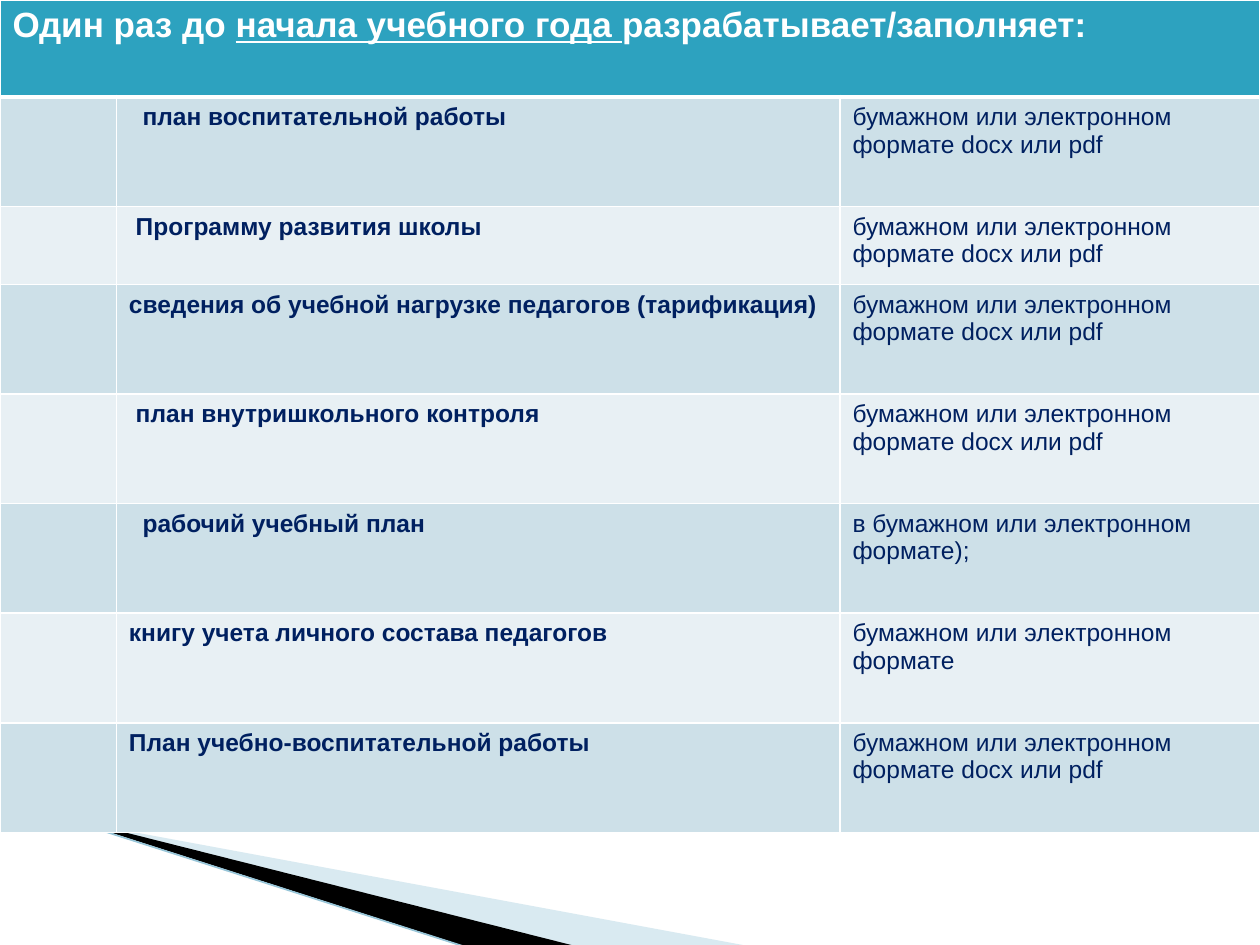
from dataclasses import dataclass

from lxml import etree
from pptx import Presentation
from pptx.dml.color import RGBColor
from pptx.enum.shapes import MSO_CONNECTOR
from pptx.enum.text import PP_ALIGN
from pptx.oxml.ns import qn
from pptx.util import Pt

STRAIGHT = MSO_CONNECTOR.STRAIGHT
JUSTIFY = PP_ALIGN.JUSTIFY
LEFT = PP_ALIGN.LEFT


@dataclass(frozen=True)
class Theme:
    font: str = "Arial"
    head_size: int = 20
    body_size: int = 14
    white: str = "FFFFFF"
    teal: str = "2DA2BF"
    bands: tuple = ("CDE0E8", "E8F0F4")
    navy: str = "002060"
    black: str = "000000"
    ray: str = "A0CBDC"
    edge: str = "97C5D8"


THEME = Theme()
HEAD = (("Один раз до ", False), ("начала учебного года ", True),
        ("разрабатывает/заполняет:", False))
FORMAT = "бумажном или электронном формате"
FILES = FORMAT + " docx или pdf"
# Document, its format, extra left inset, alignment
ROWS = (
    ("план воспитательной работы", FILES, 7.8, JUSTIFY),
    ("Программу развития школы", FILES, 3.9, LEFT),
    ("сведения об учебной нагрузке педагогов (тарификация)", FILES, 0, LEFT),
    ("план внутришкольного контроля", FILES, 3.9, LEFT),
    ("рабочий учебный план", "в бумажном или электронном формате);",
     7.8, JUSTIFY),
    ("книгу учета личного состава педагогов", FORMAT, 0, LEFT),
    ("План учебно-воспитательной работы", FILES, 0, LEFT),
)
COLS = (66.5, 413.5, 240)
HEAD_TALL, ROW_TALL, SLIM_TALL = 55.5, 62.6, 44.6
SLIM = 2


def rgb(code):
    return RGBColor.from_string(code)


def style(font, size, color, bold):
    font.name = THEME.font
    font.size = Pt(size)
    font.bold = bold
    font.color.rgb = rgb(color)


def paint(cell, color, top=1, base=1):
    """Set the borders of a cell, then its fill."""
    props = cell._tc.get_or_add_tcPr()
    for side, wide in zip("LRTB", (1, 1, top, base)):
        line = etree.SubElement(props, qn(f"a:ln{side}"), w=str(Pt(wide)))
        fill = etree.SubElement(line, qn("a:solidFill"))
        etree.SubElement(fill, qn("a:srgbClr"), val=THEME.white)
    cell.fill.solid()
    cell.fill.fore_color.rgb = rgb(color)


def write(cell, text, bold):
    para = cell.text_frame.paragraphs[0]
    para.text = text
    style(para.font, THEME.body_size, THEME.navy, bold)
    return para


def add_wedge(slide, box, points, color, alpha=None):
    left, top = box
    spots = [(Pt(left + x), Pt(top + y)) for x, y in points]
    form = slide.shapes.build_freeform(*spots[0], scale=1.0)
    form.add_line_segments(spots[1:], close=True)
    wedge = form.convert_to_shape()
    wedge.shadow.inherit = False
    wedge.fill.solid()
    wedge.fill.fore_color.rgb = rgb(color)
    wedge.line.fill.background()
    if alpha:
        tint = wedge._element.spPr.find(".//" + qn("a:srgbClr"))
        etree.SubElement(tint, qn("a:alpha"), val=str(alpha * 1000))


def add_rays(slide, left, top):
    """Slanted rays in the lower left corner."""
    box = (left, top)
    add_wedge(slide, box, ((1.4, 1.4), (390.2, 73.4), (290.1, 73.4),
                           (1.4, 0.7)), THEME.ray, 40)
    add_wedge(slide, box, ((0, 0), (290.9, 73.4), (229.7, 74.1),
                           (0.7, 0.7)), THEME.black)
    line = slide.shapes.add_connector(
        STRAIGHT, Pt(left - 38.9), Pt(top - 11.5),
        Pt(left + 229), Pt(top + 74.2))
    line.line.color.rgb = rgb(THEME.edge)
    line.line.width = Pt(0.95)
    etree.SubElement(line._element.spPr, qn("a:effectLst"))


def add_plan(slide, left, top, wide):
    """Table of documents with a merged heading row."""
    talls = [HEAD_TALL] + [ROW_TALL] * len(ROWS)
    talls[SLIM] = SLIM_TALL
    table = slide.shapes.add_table(
        len(talls), len(COLS), Pt(left), Pt(top), Pt(wide),
        Pt(sum(talls))).table
    for col, size in zip(table.columns, COLS):
        col.width = Pt(size * wide / sum(COLS))
    for row, tall in zip(table.rows, talls):
        row.height = Pt(tall)

    # Heading
    for cell in table.rows[0].cells:
        paint(cell, THEME.teal, base=3)
    head = table.cell(0, 0)
    head.merge(table.cell(0, len(COLS) - 1))
    para = head.text_frame.paragraphs[0]
    for text, under in HEAD:
        run = para.add_run()
        run.text = text
        style(run.font, THEME.head_size, THEME.white, True)
        run.font.underline = under

    # Documents
    for i, (name, kind, inset, align) in enumerate(ROWS):
        cells = list(table.rows[i + 1].cells)
        for cell in cells:
            paint(cell, THEME.bands[i % 2], top=1 if i else 3)
        write(cells[1], name, True).alignment = align
        cells[1].margin_left = Pt(7.2 + inset)
        write(cells[2], kind, False)


def main():
    deck = Presentation()
    deck.slide_width, deck.slide_height = Pt(720), Pt(540)
    slide = deck.slides.add_slide(deck.slide_layouts[6])
    slide.background.fill.solid()
    slide.background.fill.fore_color.rgb = rgb(THEME.white)
    add_rays(slide, 38.2, 467.3)
    add_plan(slide, 0, 0, 720)
    deck.save("out.pptx")


if __name__ == "__main__":
    main()
